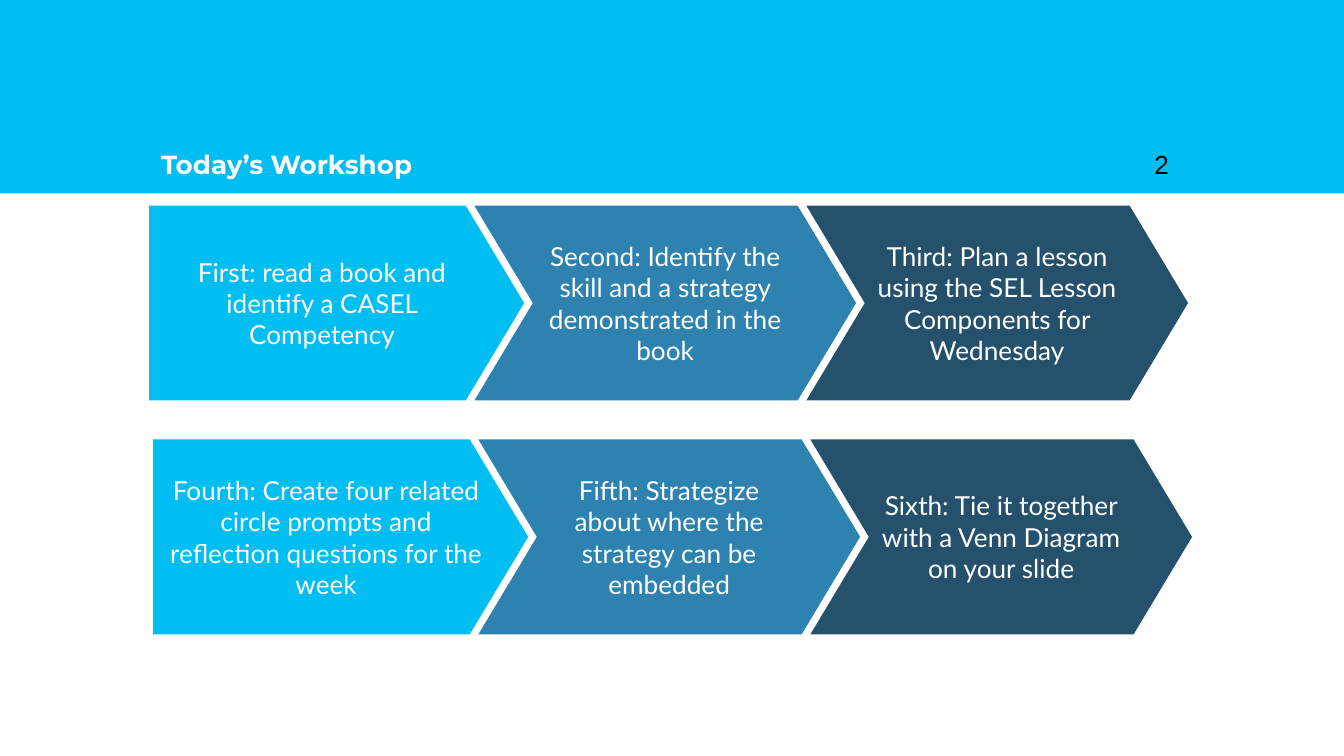
from pptx import Presentation, util as u
from pptx.dml.color import RGBColor
from pptx.enum import shapes, text

WIDTH = 10
HEIGHT = WIDTH * 9 / 16
BAND_HEIGHT = 1.44
ROW_TOP, ROW_STEP, ROW_HEIGHT = 1.53, 1.74, 1.45
ROW_LEFT, ROW_SHIFT = 1.11, 0.03
SKY, BLUE, NAVY, WHITE, BLACK = "00BEF2", "2D82B0", "25516C", "FFFFFF", "000000"


def add_block(page, kind, left, top, width, height, fill):
    block = page.shapes.add_shape(
        kind, u.Inches(left), u.Inches(top), u.Inches(width), u.Inches(height))
    block.shadow.inherit = False
    block.fill.solid()
    block.fill.fore_color.rgb = RGBColor.from_string(fill)
    block.line.fill.background()
    return block


def write(shape, words, font, color, anchor, align, bold=False, side=0.1):
    frame = shape.text_frame
    frame.text = words
    frame.word_wrap = True
    frame.vertical_anchor = anchor
    frame.margin_left = frame.margin_right = u.Inches(side)
    frame.margin_top = frame.margin_bottom = u.Inches(0.1)
    para = frame.paragraphs[0]
    para.alignment = align
    span = para.runs[0]
    span.font.name = font
    span.font.size = u.Pt(14)
    span.font.bold = bold
    span.font.color.rgb = RGBColor.from_string(color)


deck = Presentation()
deck.slide_width, deck.slide_height = u.Inches(WIDTH), u.Inches(HEIGHT)
page = deck.slides.add_slide(deck.slide_layouts[6])

add_block(page, shapes.MSO_SHAPE.RECTANGLE, 0, 0, WIDTH, BAND_HEIGHT, SKY)

headings = [
    ("Today’s Workshop", 1.1, 7.8, "Montserrat", WHITE, True),
    ("2", 8.49, 0.6, "Arial", BLACK, False),
]
for words, left, width, font, color, bold in headings:
    box = page.shapes.add_textbox(
        u.Inches(left), u.Inches(BAND_HEIGHT - 0.73), u.Inches(width), u.Inches(0.73))
    write(box, words, font, color, text.MSO_ANCHOR.BOTTOM, text.PP_ALIGN.LEFT, bold)

columns = [
    (shapes.MSO_SHAPE.PENTAGON, 0, 2.79, SKY, 0.1),
    (shapes.MSO_SHAPE.CHEVRON, 2.42, 2.84, BLUE, 0.1),
    (shapes.MSO_SHAPE.CHEVRON, 4.89, 2.84, NAVY, 0.08),
]
rows = [
    ["First: read a book and identify a CASEL Competency",
     "Second: Identify the skill and a strategy demonstrated in the book",
     "Third: Plan a lesson using the SEL Lesson Components for Wednesday"],
    ["Fourth: Create four related circle prompts and reflection questions for the week",
     "Fifth: Strategize about where the strategy can be embedded",
     "Sixth: Tie it together with a Venn Diagram on your slide"],
]
for row, steps in enumerate(rows):
    for (kind, offset, width, fill, side), words in zip(columns, steps):
        arrow = add_block(page, kind, ROW_LEFT + row * ROW_SHIFT + offset,
                          ROW_TOP + row * ROW_STEP, width, ROW_HEIGHT, fill)
        arrow.adjustments[0] = 0.3
        write(arrow, words, "Lato", WHITE, text.MSO_ANCHOR.MIDDLE,
              text.PP_ALIGN.CENTER, side=side)

deck.save("out.pptx")
